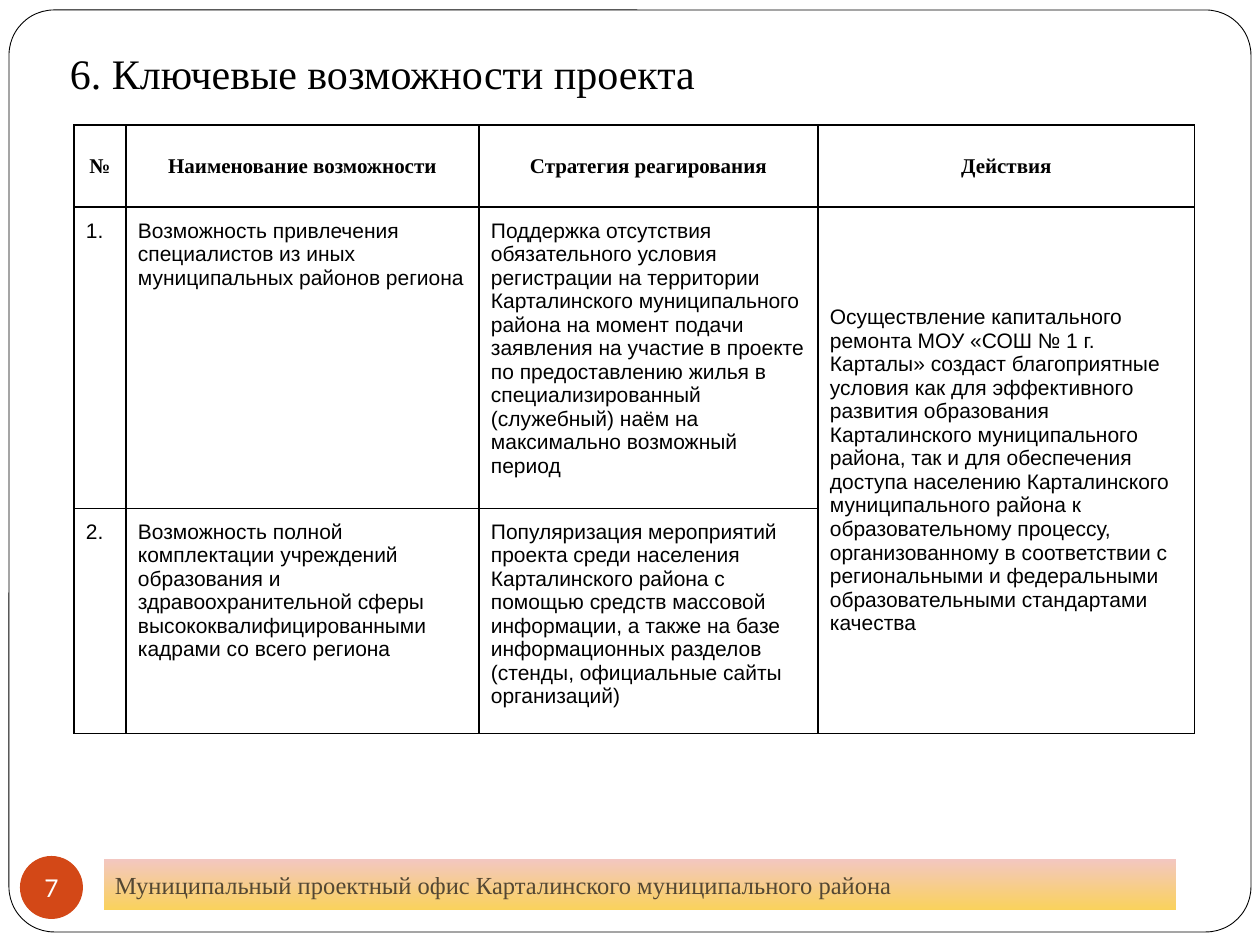
import pptx
import pptx.util
import pptx.dml.color
import pptx.enum.shapes
import pptx.enum.text
import lxml.etree
from pptx.oxml.ns import qn

SCALE = 914400 / 126  # EMU in one px
SHAPE = pptx.enum.shapes.MSO_SHAPE
ALIGN = pptx.enum.text.PP_ALIGN
MID = pptx.enum.text.MSO_ANCHOR.MIDDLE
TOP = pptx.enum.text.MSO_ANCHOR.TOP


def px(*nums):
    return [pptx.util.Emu(round(n * SCALE)) for n in nums]


def write(frame, text, size, face, color, align=ALIGN.LEFT, bold=False):
    frame.word_wrap = True
    para = frame.paragraphs[0]
    para.text = text
    para.alignment = align
    para.font.size = pptx.util.Pt(size)
    para.font.name = face
    para.font.bold = bold
    para.font.color.rgb = pptx.dml.color.RGBColor.from_string(color)


deck = pptx.Presentation()
deck.slide_width, deck.slide_height = px(1260, 945)
slide = deck.slides.add_slide(deck.slide_layouts[6])
shapes = slide.shapes

# Page frame, number badge and footer bar
frame = shapes.add_shape(SHAPE.ROUNDED_RECTANGLE, *px(9, 10, 1242, 922))
frame.adjustments[0] = 0.049
badge = shapes.add_shape(SHAPE.OVAL, *px(20, 856, 63, 63))
bar = shapes.add_shape(SHAPE.RECTANGLE, *px(104, 859, 1072, 51))
for shape, color in (frame, "FFFFFF"), (badge, "D34817"), (bar, None):
    shape.shadow.inherit = False
    shape.line.fill.background()
    if color:
        shape.fill.solid()
        shape.fill.fore_color.rgb = pptx.dml.color.RGBColor.from_string(color)
frame.line.color.rgb = pptx.dml.color.RGBColor.from_string("000000")
frame.line.width = pptx.util.Pt(0.5)

bar.fill.gradient()
bar.fill.gradient_angle = 270
for stop, color in zip(bar.fill.gradient_stops, ("F3C7C1", "FAD25C")):
    stop.color.rgb = pptx.dml.color.RGBColor.from_string(color)

# Title and footer text
title = shapes.add_textbox(*px(59, 37, 969, 66))
write(badge.text_frame, "7", 14, "Lato", "FFFFFF", ALIGN.CENTER)
write(bar.text_frame, "Муниципальный проектный офис Карталинского муниципального района",
      14, "Times New Roman", "534733")
write(title.text_frame, "6. Ключевые возможности проекта", 24, "Times New Roman", "000000")
for shape, pad in (badge, 0), (bar, 11), (title, 11):
    text = shape.text_frame
    text.margin_left, text.margin_top, text.margin_right, text.margin_bottom = px(*[pad] * 4)
    text.vertical_anchor = TOP if shape is title else MID
badge.text_frame.word_wrap = False

# Table of opportunities
rows = [
    ["№", "Наименование возможности", "Стратегия реагирования", "Действия"],
    ["1.",
     "Возможность привлечения специалистов из иных муниципальных районов региона",
     "Поддержка отсутствия обязательного условия регистрации на территории "
     "Карталинского муниципального района на момент подачи заявления на участие "
     "в проекте по предоставлению жилья в специализированный (служебный) наём "
     "на максимально возможный период",
     "Осуществление капитального ремонта МОУ «СОШ № 1 г. Карталы» создаст "
     "благоприятные условия как для эффективного развития образования "
     "Карталинского муниципального района, так и для обеспечения доступа "
     "населению Карталинского муниципального района к образовательному процессу, "
     "организованному в соответствии с региональными и федеральными "
     "образовательными стандартами качества"],
    ["2.",
     "Возможность полной комплектации учреждений образования и здравоохранительной "
     "сферы высококвалифицированными кадрами со всего региона",
     "Популяризация мероприятий проекта среди населения Карталинского района "
     "с помощью средств массовой информации, а также на базе информационных "
     "разделов (стенды, официальные сайты организаций)",
     ""],
]
wide = px(52, 353, 339, 377)
high = px(82, 283, 214)
table = shapes.add_table(3, 4, *px(74, 125, 1121, 579)).table
table.first_row = table.horz_banding = False
for col, width in zip(table.columns, wide):
    col.width = width
for row, height in zip(table.rows, high):
    row.height = height
table.cell(1, 3).merge(table.cell(2, 3))

for r, row in enumerate(rows):
    for c, words in enumerate(row):
        cell = table.cell(r, c)
        head = r == 0
        if words:
            write(cell.text_frame, words, 12, "Times New Roman" if head else "Arial",
                  "000000", ALIGN.CENTER if head else ALIGN.LEFT, head)
        cell.vertical_anchor = MID if head or c == 3 else TOP
        cell.margin_left, cell.margin_top, cell.margin_right, cell.margin_bottom = px(*[12] * 4)
        # Borders come before the fill in the cell's XML
        props = cell._tc.get_or_add_tcPr()
        for side in "lnL", "lnR", "lnT", "lnB":
            edge = lxml.etree.SubElement(props, qn("a:" + side), w="9525")
            solid = lxml.etree.SubElement(edge, qn("a:solidFill"))
            lxml.etree.SubElement(solid, qn("a:srgbClr"), val="000000")
        cell.fill.background()

deck.save("out.pptx")
